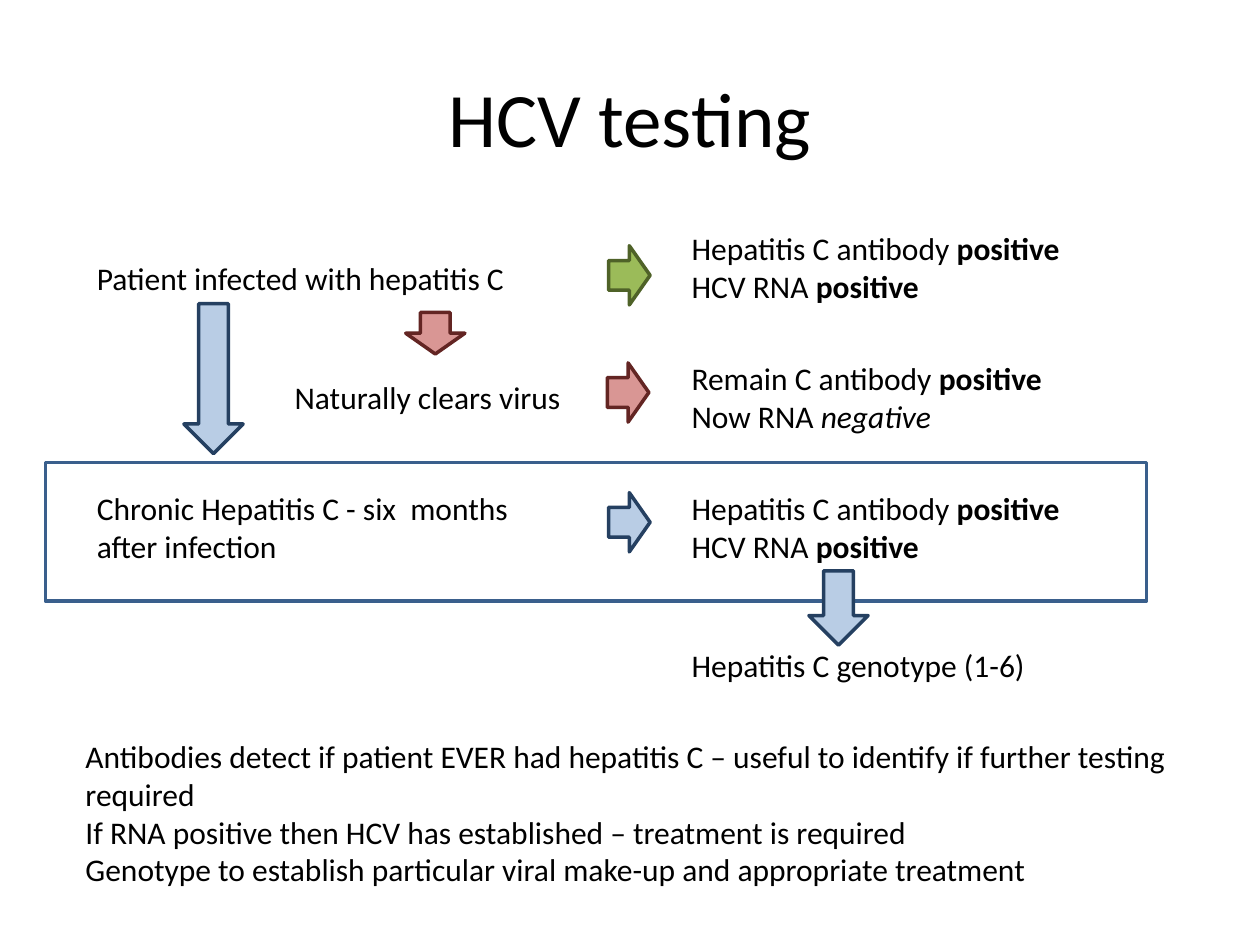
from pptx import Presentation
from pptx.dml.color import RGBColor
from pptx.enum.shapes import MSO_SHAPE as Preset
from pptx.enum.text import MSO_ANCHOR as Anchor, PP_ALIGN as Align
from pptx.util import Inches, Pt

THEME = {
    "font": "Calibri", "text": "000000", "title_size": 44, "body_size": 18,
    "line_width": 2, "frame": "3A5F8C",
    "green": ("9BBB59", "4F6228"),
    "blue": ("B9CDE5", "254061"),
    "red": ("D99694", "632523"),
}
WIDTH, HEIGHT = 10, 7.5

# Grid: left edges of the columns, and the first top and pitch of the three test rows
COLUMNS = {"notes": 0.58, "stage": 0.67, "cleared": 2.24, "result": 5.39}
FIRST_ROW, ROW_PITCH = 1.77, 1.03
ROWS = [FIRST_ROW + ROW_PITCH * row for row in range(3)]
RESULT_WIDTH, ONE_LINE, TWO_LINES = 3.39, 0.4, 0.71
ARROW_WIDTH, ARROW_LENGTH = 0.47, 0.33

# A paragraph is a list of (words, style) runs
TITLE = [[("HCV testing", "")]]
STAGES = [  # column, offset in row, width, height, words
    ("stage", 0.24, 3.46, ONE_LINE, "Patient infected with hepatitis C"),
    ("cleared", 0.15, 2.9, ONE_LINE, "Naturally clears virus"),
    ("stage", 0, 3.7, TWO_LINES, "Chronic Hepatitis C - six  months after infection"),
]
RESULTS = [
    [[("Hepatitis C antibody ", ""), ("positive", "bold")],
     [("HCV RNA ", ""), ("positive", "bold")]],
    [[("Remain C antibody ", ""), ("positive", "bold")],
     [("Now RNA ", ""), ("negative", "italic")]],
    [[("Hepatitis C antibody ", ""), ("positive", "bold")],
     [("HCV RNA ", ""), ("positive", "bold")]],
]
GENOTYPE = [[("Hepatitis C genotype (1-6)", "")]]
NOTES = [[(line, "")] for line in (
    "Antibodies detect if patient EVER had hepatitis C – useful to identify if further testing required",
    "If RNA positive then HCV has established – treatment is required",
    "Genotype to establish particular viral make-up and appropriate treatment",
)]
RESULT_ARROWS = [("green", 4.76, 2.02), ("red", 4.75, 2.95), ("blue", 4.76, 3.98)]
STEP_ARROWS = [  # colour, left, top, length
    ("blue", 1.46, 2.41, 1.19),
    ("red", 3.22, 2.48, ARROW_LENGTH),
]
GENOTYPE_ARROW = ("blue", 6.42, 4.53, 0.59)
CHRONIC_FRAME = (0.36, 3.67, 8.74, 1.1)


def add_text(slide, box, paragraphs, size=THEME["body_size"], align=Align.LEFT, anchor=Anchor.TOP):
    text_frame = slide.shapes.add_textbox(*map(Inches, box)).text_frame
    text_frame.word_wrap = True
    text_frame.vertical_anchor = anchor
    text_frame.text = "\n".join("" for _ in paragraphs)
    for paragraph, runs in zip(text_frame.paragraphs, paragraphs):
        paragraph.alignment = align
        for words, style in runs:
            run = paragraph.add_run()
            run.text = words
            font = run.font
            font.name, font.size = THEME["font"], Pt(size)
            font.color.rgb = RGBColor.from_string(THEME["text"])
            font.bold, font.italic = style == "bold", style == "italic"


def add_outlined(slide, preset, box, line, fill=None):
    shape = slide.shapes.add_shape(preset, *map(Inches, box))
    shape.shadow.inherit = False
    if fill:
        shape.fill.solid()
        shape.fill.fore_color.rgb = RGBColor.from_string(fill)
    else:
        shape.fill.background()
    shape.line.color.rgb = RGBColor.from_string(line)
    shape.line.width = Pt(THEME["line_width"])
    return shape


def add_arrow(slide, colour, left, top, length=ARROW_LENGTH, rotation=0):
    fill, line = THEME[colour]
    box = (left, top, ARROW_WIDTH, length)
    add_outlined(slide, Preset.DOWN_ARROW, box, line, fill).rotation = rotation


def main():
    presentation = Presentation()
    presentation.slide_width, presentation.slide_height = Inches(WIDTH), Inches(HEIGHT)
    slide = presentation.slides.add_slide(presentation.slide_layouts[6])

    title_box = (0.05 * WIDTH, 0.04 * HEIGHT, 0.9 * WIDTH, 1.25)
    add_text(slide, title_box, TITLE, THEME["title_size"], Align.CENTER, Anchor.MIDDLE)
    for top, (column, offset, width, height, words) in zip(ROWS, STAGES):
        add_text(slide, (COLUMNS[column], top + offset, width, height), [[(words, "")]])
    for top, result in zip(ROWS, RESULTS):
        add_text(slide, (COLUMNS["result"], top, RESULT_WIDTH, TWO_LINES), result)
    add_text(slide, (COLUMNS["notes"], 5.8, 8.82, 1.31), NOTES)

    for arrow in RESULT_ARROWS:
        add_arrow(slide, *arrow, rotation=270)
    for arrow in STEP_ARROWS:
        add_arrow(slide, *arrow)
    add_outlined(slide, Preset.RECTANGLE, CHRONIC_FRAME, THEME["frame"])
    add_arrow(slide, *GENOTYPE_ARROW)
    add_text(slide, (COLUMNS["result"], 5.08, RESULT_WIDTH, ONE_LINE), GENOTYPE)

    presentation.save("out.pptx")


if __name__ == "__main__":
    main()
